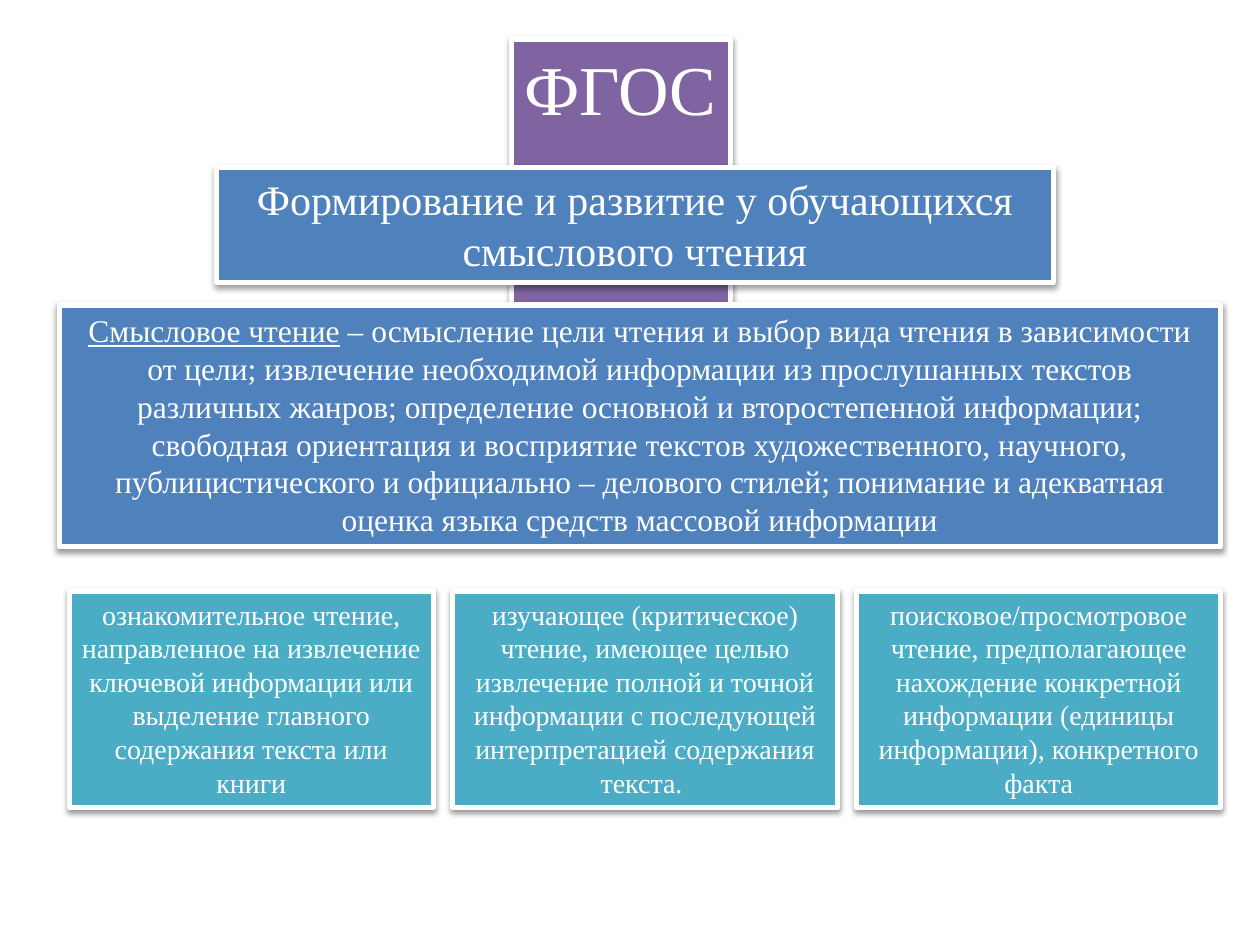
"""Builds a slide on semantic reading in the FGOS standard."""
from pptx import Presentation
from pptx import util as u
from pptx.dml.color import RGBColor
from pptx.enum import shapes, text
from pptx.oxml import parse_xml
from pptx.oxml.ns import nsdecls, qn

COLORS = {"white": "FFFFFF", "purple": "8064A2", "blue": "4F81BD",
          "teal": "4BACC6", "shadow": "000000"}
FONT = "Times New Roman"


def rgb(name):
    return RGBColor.from_string(COLORS[name])


def add_run(p, content, size=18, color="white", underline=None):
    r = p.add_run()
    r.text = content
    r.font.name, r.font.size = FONT, u.Pt(size)
    r.font.color.rgb = rgb(color)
    r.font.underline = underline


class Deck:
    """Holds the box style and the current slide."""

    def __init__(self, prs):
        self.s = prs.slides.add_slide(prs.slide_layouts[5])
        self.border = 3

    def style(self, sp, fill):
        sp.fill.solid()
        sp.fill.fore_color.rgb = rgb(fill)
        sp.line.color.rgb = rgb("white")
        sp.line.width = u.Pt(self.border)
        sp.shadow.inherit = False
        sp._element.spPr.find(qn("a:effectLst")).append(parse_xml(
            f'<a:outerShdw {nsdecls("a")} blurRad="40000" dist="20000" dir="5400000" rotWithShape="0">'
            f'<a:srgbClr val="{COLORS["shadow"]}"><a:alpha val="38000"/></a:srgbClr></a:outerShdw>'))

    def set_text(self, sp, runs, size, align, wrap=True):
        tf = sp.text_frame
        tf.word_wrap = wrap
        tf.auto_size = text.MSO_AUTO_SIZE.SHAPE_TO_FIT_TEXT
        tf.vertical_anchor = text.MSO_ANCHOR.TOP
        p = tf.paragraphs[0]
        p.alignment = align
        for content, underline in runs:
            add_run(p, content, size=size, underline=underline)

    def title(self, content, x, y, w, h, fill, size):
        sp = self.s.shapes.title
        sp.left, sp.top, sp.width, sp.height = map(u.Pt, (x, y, w, h))
        self.style(sp, fill)
        self.set_text(sp, [(content, None)], size, text.PP_ALIGN.LEFT, wrap=False)

    def box(self, runs, x, y, w, h, fill, size):
        sp = self.s.shapes.add_shape(shapes.MSO_SHAPE.RECTANGLE, *map(u.Pt, (x, y, w, h)))
        self.style(sp, fill)
        self.set_text(sp, runs, size, text.PP_ALIGN.CENTER)


def main():
    prs = Presentation()
    prs.slide_width, prs.slide_height = u.Pt(720), u.Pt(540)
    deck = Deck(prs)
    deck.title("ФГОС", 292.3, 22.3, 125.3, 55.4, "purple", 40)
    deck.box([("Формирование и развитие у обучающихся смыслового чтения", None)],
             123.8, 95.8, 478.1, 65.5, "blue", 24)
    deck.box([("Смысловое чтение", True),
              (" – осмысление цели чтения и выбор вида чтения в зависимости от цели; "
               "извлечение необходимой информации из прослушанных текстов различных жанров; "
               "определение основной и второстепенной информации; свободная ориентация и "
               "восприятие текстов художественного, научного, публицистического и официально – "
               "делового стилей; понимание и адекватная оценка языка средств массовой информации",
               None)],
             33.8, 174.3, 663.8, 138.2, "blue", 18)

    kinds = [
        (208, "ознакомительное чтение, направленное на извлечение ключевой информации "
              "или выделение главного содержания текста или книги"),
        (220, "изучающее (критическое) чтение, имеющее целью извлечение полной и точной "
              "информации с последующей интерпретацией содержания текста. "),
        (208, "поисковое/просмотровое чтение, предполагающее нахождение конкретной "
              "информации (единицы информации), конкретного факта"),
    ]
    x, gap = 39.6, 11
    for w, content in kinds:
        deck.box([(content, None)], x, 337.7, w, 123.8, "teal", 16)
        x += w + gap
    prs.save("out.pptx")


if __name__ == "__main__":
    main()
